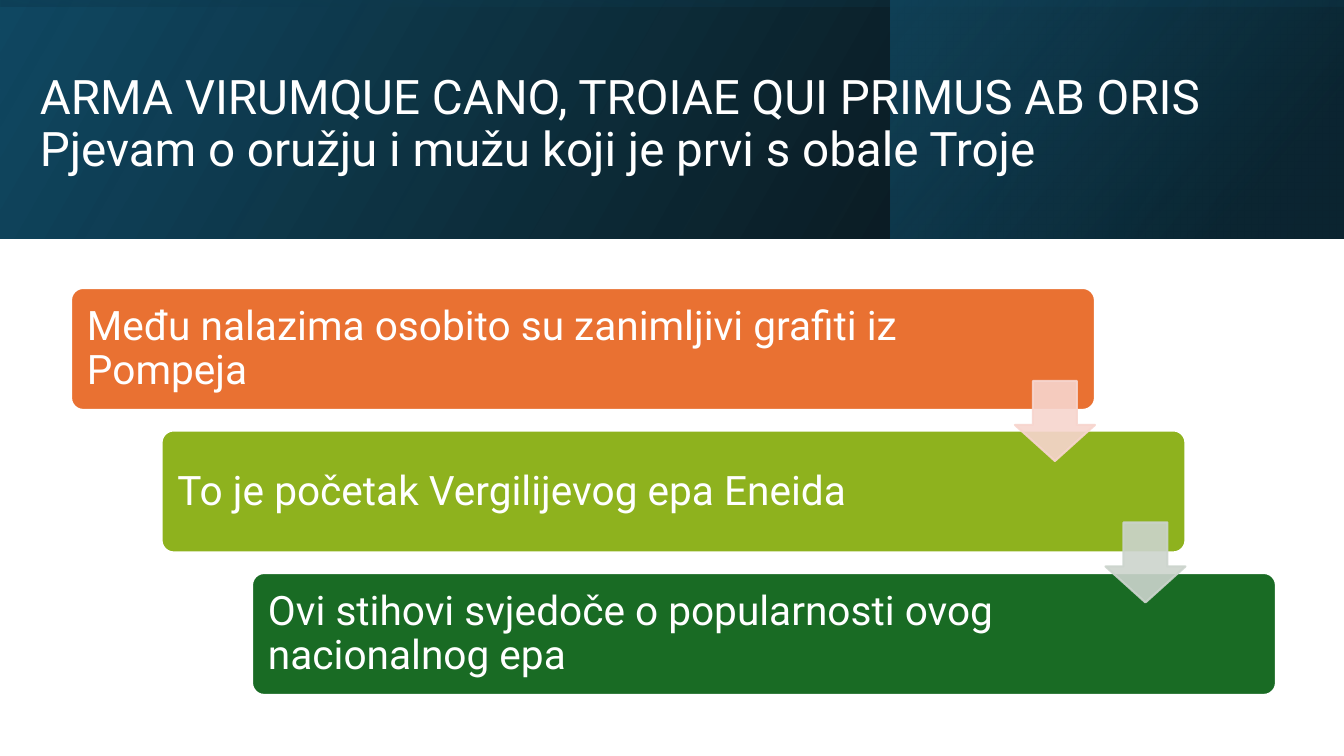
from dataclasses import dataclass

from lxml import etree
from pptx import Presentation
from pptx import util as u
from pptx.dml.color import RGBColor
from pptx.enum import shapes, text
from pptx.oxml.ns import qn

KIND = shapes.MSO_SHAPE


@dataclass(frozen=True)
class Theme:
    font: str = "Roboto"
    white: str = "FFFFFF"
    black: str = "000000"
    navy: str = "104862"
    deep: str = "0B3041"
    teal: str = "156082"
    steps: tuple = ("E97132", "8EB21E", "196B24")
    arrows: tuple = ("F7D5CE", "CCD4CD")
    title: int = 34
    body: int = 29
    line: float = 1.5


LOOK = Theme()
STEPS = (
    ("Među nalazima osobito su zanimljivi grafiti iz Pompeja", 892),
    ("To je početak Vergilijevog epa Eneida", 847),
    ("Ovi stihovi svjedoče o popularnosti ovog nacionalnog epa", 847),
)


def px(n):
    return u.Emu(round(n * 914400 / 100.8))


def shape(slide, kind, box):
    item = slide.shapes.add_shape(kind, *map(px, box))
    item.shadow.inherit = False
    return item


def alpha(color, part):
    etree.SubElement(color, qn("a:alpha"), val=str(part * 1000))


def paint(item, fill, line, part=100):
    item.fill.solid()
    item.fill.fore_color.rgb = RGBColor.from_string(fill)
    item.line.color.rgb = RGBColor.from_string(line)
    item.line.width = u.Pt(LOOK.line)
    if part < 100:
        for color in item._element.spPr.iter(qn("a:srgbClr")):
            alpha(color, part)


def fade(item, stops, angle):
    """Mirror the shape and give it a gradient with transparent stops."""
    item.line.fill.background()
    item.fill.background()
    props = item._element.spPr
    props.find(qn("a:xfrm")).set("flipH", "1")
    grad = etree.Element(qn("a:gradFill"), rotWithShape="1")
    stop_list = etree.SubElement(grad, qn("a:gsLst"))
    for pos, color, part in stops:
        stop = etree.SubElement(stop_list, qn("a:gs"), pos=str(pos * 1000))
        alpha(etree.SubElement(stop, qn("a:srgbClr"), val=color), part)
    etree.SubElement(grad, qn("a:lin"), ang=str(angle * 60000), scaled="0")
    props.replace(props.find(qn("a:noFill")), grad)


def write(slide, box, lines, size, inset=None):
    frame = slide.shapes.add_textbox(*map(px, box)).text_frame
    frame.word_wrap = True
    frame.vertical_anchor = text.MSO_ANCHOR.MIDDLE
    if inset is not None:
        frame.margin_left = frame.margin_right = px(inset)
        frame.margin_top = frame.margin_bottom = px(inset)
    para = frame.paragraphs[0]
    para.line_spacing = 0.9
    for i, line in enumerate(lines):
        if i:
            para.add_line_break()
        run = para.add_run()
        run.text = line
        run.font.name = LOOK.font
        run.font.size = u.Pt(size)
        run.font.color.rgb = RGBColor.from_string(LOOK.white)


def header(slide, box):
    x, y, w, h = box
    # Base band
    base = shape(slide, KIND.RECTANGLE, box)
    fade(base, ((0, LOOK.black, 96), (100, LOOK.navy, 100)), 330)
    # Right panel
    side = shape(slide, KIND.RECTANGLE, (x + 891, y, w - 892, h))
    fade(side, ((19, LOOK.deep, 68), (100, LOOK.teal, 48)), 320)
    # Overlay, turned on its side about the band's centre
    turned = (x + (w - h) / 2, y + (h - w) / 2, h, w)
    veil = shape(slide, KIND.RECTANGLE, turned)
    veil.rotation = 270
    fade(veil, ((23, LOOK.navy, 16), (99, LOOK.black, 45)), 350)
    # Title
    lines = ("ARMA VIRUMQUE CANO, TROIAE QUI PRIMUS AB ORIS",
             "Pjevam o oružju i mužu koji je prvi s obale Troje")
    write(slide, (x + 30, y + 38, 1194, 174), lines, LOOK.title)


def stairs(slide, box):
    x, y, w, h = box
    wide, high, size = 1024, 122, 80
    last = len(STEPS) - 1
    dx, dy = (w - wide) / last, (h - high) / last
    # Step cards
    for i, (line, room) in enumerate(STEPS):
        left, top = x + i * dx, y + i * dy
        card = shape(slide, KIND.ROUNDED_RECTANGLE, (left, top, wide, high))
        card.adjustments[0] = 0.1
        paint(card, LOOK.steps[i], LOOK.white)
        write(slide, (left + 4, top + 4, room, high - 7), (line,),
              LOOK.body, 12)
    # Arrows between cards
    for i, color in enumerate(LOOK.arrows):
        spot = (x + wide - size + i * dx, y + 93 + i * (dy - 1), size, size)
        arrow = shape(slide, KIND.DOWN_ARROW, spot)
        arrow.adjustments[0] = 0.55
        arrow.adjustments[1] = 0.45
        paint(arrow, color, color, 90)


def main():
    deck = Presentation()
    deck.slide_width, deck.slide_height = px(1344), px(756)
    slide = deck.slides.add_slide(deck.slide_layouts[6])
    header(slide, (0, 0, 1344, 239))
    stairs(slide, (71, 288, 1205, 407))
    deck.save("out.pptx")


if __name__ == "__main__":
    main()
